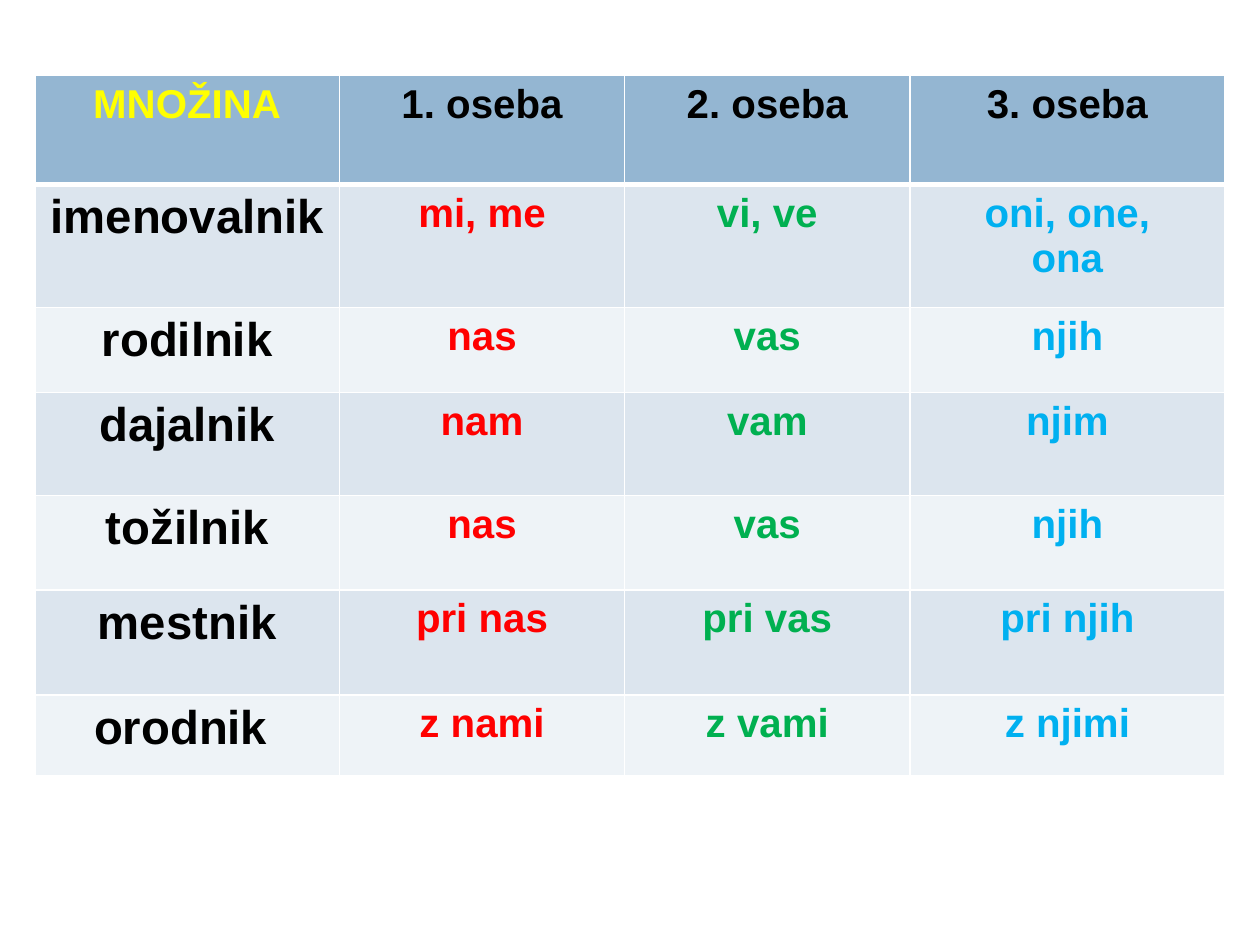
from dataclasses import dataclass

from lxml.etree import SubElement
from pptx import Presentation
from pptx.dml.color import RGBColor as Rgb
from pptx.enum.text import PP_ALIGN as Align
from pptx.oxml.ns import qn
from pptx.util import Pt


@dataclass(frozen=True)
class Theme:
    font: str = "Arial"
    case_size: float = 27
    text_size: float = 23
    header_fill: str = "94B6D2"
    band_fills: tuple = ("DCE5EE", "EEF3F7")
    number_color: str = "FFFF00"
    label_color: str = "000000"
    person_colors: tuple = ("FF0000", "00B050", "00B0F0")
    border_color: str = "FFFFFF"
    thin: float = 1
    thick: float = 3


THEME = Theme()
COLUMN_WIDTHS = (174, 163, 163, 180)
ROW_HEIGHTS = (62, 70.5, 48.5, 59, 54, 60, 46)
HEADER = ("MNOŽINA", "1. oseba", "2. oseba", "3. oseba")
DECLENSION = (
    ("imenovalnik", "mi, me", "vi, ve", "oni, one,\nona"),
    ("rodilnik", "nas", "vas", "njih"),
    ("dajalnik", "nam", "vam", "njim"),
    ("tožilnik", "nas", "vas", "njih"),
    ("mestnik", "pri nas", "pri vas", "pri njih"),
    ("orodnik ", "z nami", "z vami", "z njimi"),
)


def set_borders(cell, top, bottom):
    properties = cell._tc.get_or_add_tcPr()
    sides = {"lnL": THEME.thin, "lnR": THEME.thin, "lnT": top, "lnB": bottom}
    for side, width in sides.items():
        border = SubElement(properties, qn(f"a:{side}"), w=str(Pt(width)))
        fill = SubElement(border, qn("a:solidFill"))
        SubElement(fill, qn("a:srgbClr"), val=THEME.border_color)


def write_cell(cell, text, size, color, fill):
    cell.fill.solid()
    cell.fill.fore_color.rgb = Rgb.from_string(fill)
    frame = cell.text_frame
    for index, line in enumerate(text.split("\n")):
        paragraph = frame.add_paragraph() if index else frame.paragraphs[0]
        paragraph.alignment = Align.CENTER
        run = paragraph.add_run()
        run.text = line
        run.font.name = THEME.font
        run.font.size = Pt(size)
        run.font.bold = True
        run.font.color.rgb = Rgb.from_string(color)


def add_declension_table(slide):
    table = slide.shapes.add_table(
        len(ROW_HEIGHTS), len(COLUMN_WIDTHS), Pt(20), Pt(43.25),
        Pt(sum(COLUMN_WIDTHS)), Pt(sum(ROW_HEIGHTS))).table
    for column, width in zip(table.columns, COLUMN_WIDTHS):
        column.width = Pt(width)
    for row, height in zip(table.rows, ROW_HEIGHTS):
        row.height = Pt(height)
    return table


def fill_header(table):
    colors = (THEME.number_color,) + (THEME.label_color,) * 3
    for column, (label, color) in enumerate(zip(HEADER, colors)):
        cell = table.cell(0, column)
        set_borders(cell, THEME.thin, THEME.thick)
        write_cell(cell, label, THEME.text_size, color, THEME.header_fill)


def fill_cases(table):
    colors = (THEME.label_color,) + THEME.person_colors
    sizes = (THEME.case_size,) + (THEME.text_size,) * 3
    for row, forms in enumerate(DECLENSION, start=1):
        top = THEME.thick if row == 1 else THEME.thin
        fill = THEME.band_fills[(row - 1) % 2]
        for column, (form, size, color) in enumerate(zip(forms, sizes, colors)):
            cell = table.cell(row, column)
            set_borders(cell, top, THEME.thin)
            write_cell(cell, form, size, color, fill)


def main():
    presentation = Presentation()
    presentation.slide_width = Pt(720)
    presentation.slide_height = Pt(540)
    slide = presentation.slides.add_slide(presentation.slide_layouts[6])
    table = add_declension_table(slide)
    fill_header(table)
    fill_cases(table)
    presentation.save("out.pptx")


if __name__ == "__main__":
    main()
